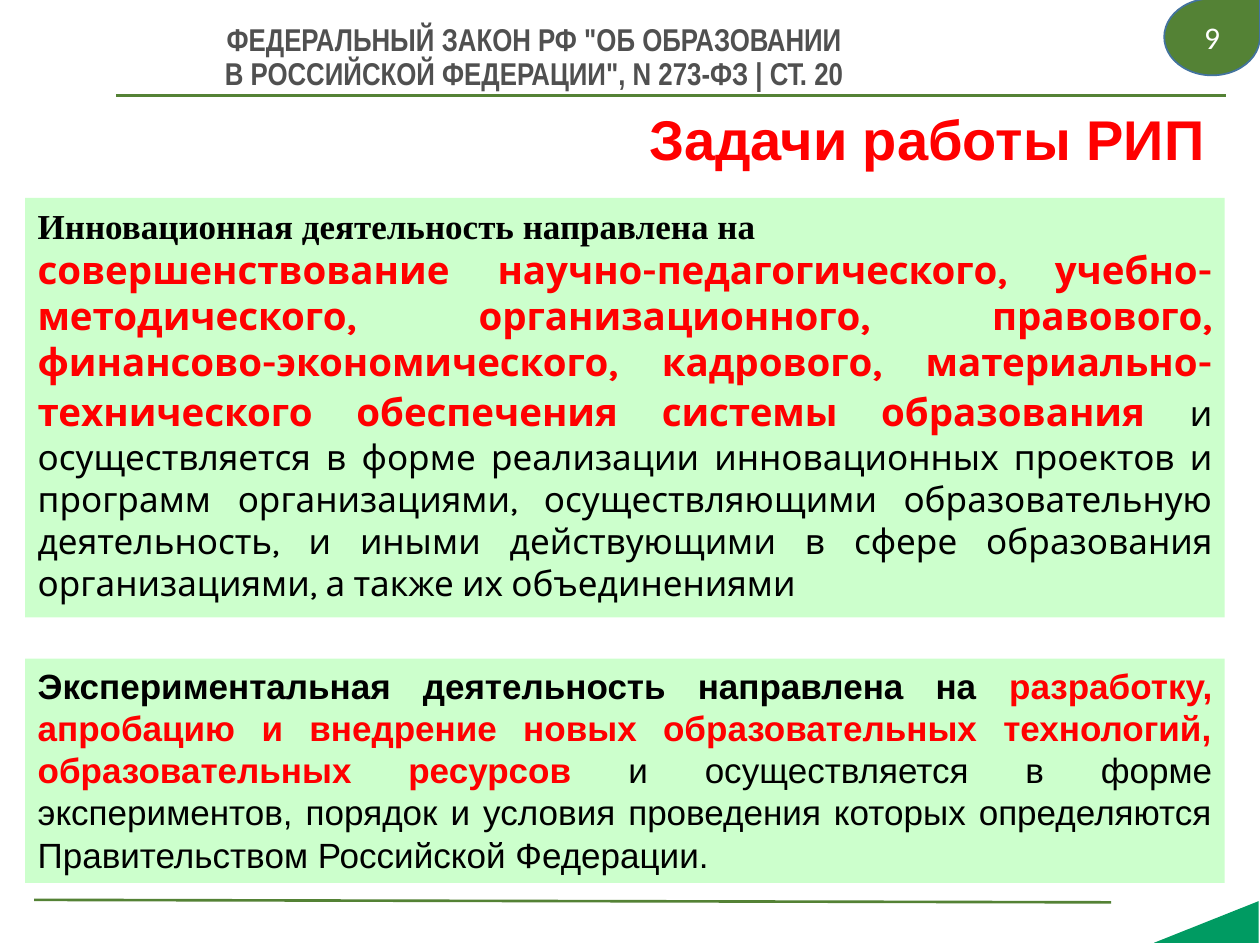
"""Build the slide on the tasks of a regional innovation platform."""
from lxml import etree
from pptx import Presentation
from pptx.dml.color import RGBColor
from pptx.enum.shapes import MSO_CONNECTOR, MSO_SHAPE
from pptx.enum.text import MSO_ANCHOR, MSO_AUTO_SIZE, PP_ALIGN
from pptx.oxml.ns import qn
from pptx.util import Cm, Pt

STRAIGHT = MSO_CONNECTOR.STRAIGHT
RECTANGLE = MSO_SHAPE.RECTANGLE
TRIANGLE = MSO_SHAPE.RIGHT_TRIANGLE
TEARDROP = MSO_SHAPE.TEAR
TOP, MIDDLE = MSO_ANCHOR.TOP, MSO_ANCHOR.MIDDLE
LEFT, CENTER, JUSTIFY = PP_ALIGN.LEFT, PP_ALIGN.CENTER, PP_ALIGN.JUSTIFY
NO_AUTOFIT = MSO_AUTO_SIZE.NONE

COLORS = {
    "green": "548235",
    "corner": "009B62",
    "panel": "CCFFCC",
    "outline": "43739E",
    "red": "FF0000",
    "black": "000000",
    "gray": "505050",
    "white": "FFFFFF",
}
PANEL_LEFT, PANEL_WIDTH = 0.51, 24.18

INNOVATION = [
    [("Инновационная деятельность направлена на", "Times New Roman", 20, "black", True)],
    [
        ("совершенствование научно-педагогического, учебно-методического, "
         "организационного, правового, финансово-экономического, кадрового, "
         "материально-технического обеспечения системы образования",
         "Karla", 22, "red", True),
        (" ", "Karla", 24, "red", True),
        ("и осуществляется в форме реализации инновационных проектов и программ "
         "организациями, осуществляющими образовательную деятельность, и иными "
         "действующими в сфере образования организациями, а также их объединениями",
         "Karla", 20, "black", False),
    ],
]
EXPERIMENT = [
    [
        ("Экспериментальная деятельность направлена на ", "Arial", 20, "black", True),
        ("разработку, апробацию и внедрение новых образовательных технологий, "
         "образовательных ресурсов", "Arial", 20, "red", True),
        (" и осуществляется в форме экспериментов, порядок и условия проведения "
         "которых определяются Правительством Российской Федерации.",
         "Arial", 20, "black", False),
    ],
]
LAW = [
    'ФЕДЕРАЛЬНЫЙ ЗАКОН РФ "ОБ ОБРАЗОВАНИИ',
    'В РОССИЙСКОЙ ФЕДЕРАЦИИ", N 273-ФЗ | СТ. 20',
]


def color(name):
    return RGBColor.from_string(COLORS[name])


def set_font(font, name, size, color_name, bold=False):
    font.name = name
    font.size = Pt(size)
    font.bold = bold
    font.color.rgb = color(color_name)


def add_rule(slide, start, end):
    line = slide.shapes.add_connector(STRAIGHT, *map(Cm, start + end))
    line.line.color.rgb = color("green")
    line.line.width = Pt(1.5)
    etree.SubElement(line._element.spPr, qn("a:effectLst"))


def add_filled_shape(slide, kind, box, fill, outline=None):
    shape = slide.shapes.add_shape(kind, *map(Cm, box))
    shape.shadow.inherit = False
    shape.fill.solid()
    shape.fill.fore_color.rgb = color(fill)
    if outline:
        shape.line.color.rgb = color(outline)
        shape.line.width = Pt(1)
    else:
        shape.line.fill.background()
    return shape


def write_lines(shape, lines, alignment, anchor, font, spacing=None):
    frame = shape.text_frame
    frame.text = "\n".join(lines)
    frame.vertical_anchor = anchor
    for paragraph in frame.paragraphs:
        paragraph.alignment = alignment
        paragraph.line_spacing = spacing
        set_font(paragraph.font, *font)


def add_panel(slide, top, height, paragraphs):
    box = (PANEL_LEFT, top, PANEL_WIDTH, height)
    frame = add_filled_shape(slide, RECTANGLE, box, "panel").text_frame
    frame.word_wrap = True
    frame.vertical_anchor = TOP
    for index, runs in enumerate(paragraphs):
        paragraph = frame.add_paragraph() if index else frame.paragraphs[0]
        paragraph.alignment = JUSTIFY
        for text, *font in runs:
            run = paragraph.add_run()
            run.text = text
            set_font(run.font, *font)


def place_title(slide, text):
    title = slide.shapes.title
    title.left, title.top, title.width, title.height = map(Cm, (12.83, 1.98, 11.86, 1.63))
    write_lines(title, [text], LEFT, TOP, ("Arial", 32, "red", True))
    title.text_frame.word_wrap = False
    title.text_frame.auto_size = NO_AUTOFIT


def add_law_reference(slide):
    box = slide.shapes.add_textbox(*map(Cm, (-0.71, 0.33, 22.96, 1.7)))
    box.text_frame.word_wrap = True
    write_lines(box, LAW, CENTER, MIDDLE, ("Arial Narrow", 18, "gray", True), 0.9)


def add_page_badge(slide, number):
    badge = add_filled_shape(slide, TEARDROP, (23.47, -0.03, 1.93, 1.55), "green", "outline")
    write_lines(badge, [number], CENTER, MIDDLE, ("Calibri", 18, "white"))


def main():
    presentation = Presentation()
    presentation.slide_width, presentation.slide_height = Cm(25.4), Cm(19.05)
    slide = presentation.slides.add_slide(presentation.slide_layouts[5])
    add_rule(slide, (2.34, 1.93), (24.71, 1.93))
    add_rule(slide, (0.69, 18.14), (22.4, 18.19))
    corner = add_filled_shape(slide, TRIANGLE, (23.9, 17.53, 0.84, 2.11), "corner")
    corner.rotation = 270
    add_panel(slide, 3.99, 8.46, INNOVATION)
    place_title(slide, "Задачи работы РИП")
    add_law_reference(slide)
    add_panel(slide, 13.28, 4.52, EXPERIMENT)
    add_page_badge(slide, "9")
    presentation.save("out.pptx")


if __name__ == "__main__":
    main()
